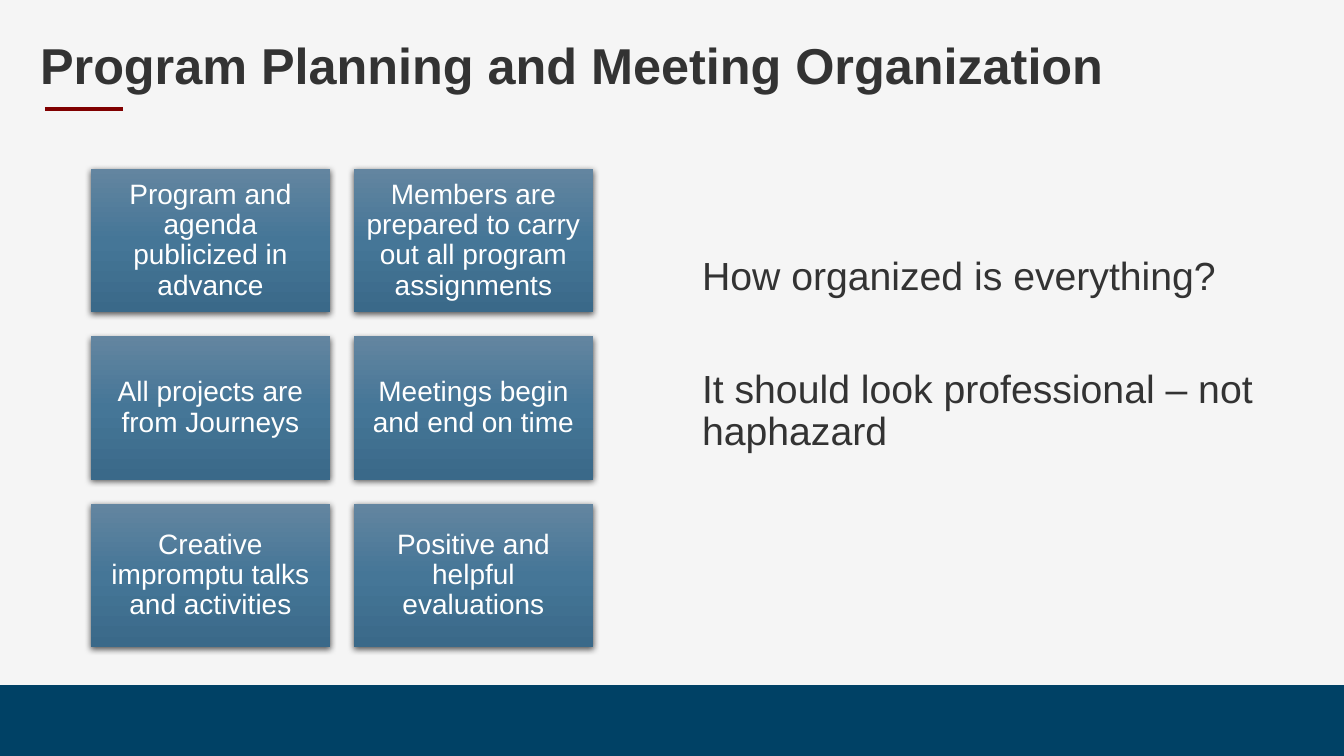
from dataclasses import dataclass
from lxml import etree
from pptx import Presentation
from pptx.dml.color import RGBColor
from pptx.enum.shapes import MSO_CONNECTOR, MSO_SHAPE
from pptx.enum.text import MSO_ANCHOR, MSO_AUTO_SIZE, PP_ALIGN
from pptx.oxml import parse_xml
from pptx.oxml.ns import nsdecls, qn
from pptx.util import Pt

RECT = MSO_SHAPE.RECTANGLE
STRAIGHT = MSO_CONNECTOR.STRAIGHT
MIDDLE, TOP = MSO_ANCHOR.MIDDLE, MSO_ANCHOR.TOP
LEFT, CENTER = PP_ALIGN.LEFT, PP_ALIGN.CENTER
NO_FIT = MSO_AUTO_SIZE.NONE


@dataclass(frozen=True)
class Theme:
    font: str = "Arial"
    background: str = "F5F5F5"
    ink: str = "333333"
    white: str = "FFFFFF"
    band: str = "004165"
    accent: str = "800000"
    shadow: str = "000000"
    card_stops: tuple = ((0, "6385A0"), (50, "457697"), (100, "3A6989"))
    title_size: int = 36
    body_size: int = 28
    card_size: int = 20


THEME = Theme()
CARDS = [
    "Program and agenda publicized in advance",
    "Members are prepared to carry out all program assignments",
    "All projects are from Journeys",
    "Meetings begin and end on time",
    "Creative impromptu talks and activities",
    "Positive and helpful evaluations",
]
QUESTIONS = [
    "How organized is everything?",
    "It should look professional – not haphazard",
]


def px(n):
    return round(n * 914400 / 100.8)


def rgb(value):
    return RGBColor.from_string(value)


def place(sp, box):
    sp.left, sp.top, sp.width, sp.height = map(px, box)


def write(p, text, size, color, align=LEFT, bold=False):
    p.alignment = align
    p.line_spacing = 0.9
    r = p.add_run()
    r.text = text
    r.font.name = THEME.font
    r.font.size = Pt(size)
    r.font.bold = bold
    r.font.color.rgb = rgb(color)


def add_rect(s, box):
    sp = s.shapes.add_shape(RECT, *map(px, box))
    sp.shadow.inherit = False
    sp.line.fill.background()
    return sp


def style_card(sp):
    stops = "".join(
        f'<a:gs pos="{pos * 1000}"><a:srgbClr val="{color}"/></a:gs>'
        for pos, color in THEME.card_stops
    )
    gradient = parse_xml(
        f'<a:gradFill {nsdecls("a")} rotWithShape="1"><a:gsLst>{stops}</a:gsLst>'
        '<a:lin ang="5400000" scaled="0"/></a:gradFill>'
    )
    sp_pr = sp._element.spPr
    sp_pr.find(qn("a:prstGeom")).addnext(gradient)
    sp_pr.find(qn("a:effectLst")).append(parse_xml(
        f'<a:outerShdw {nsdecls("a")} blurRad="{Pt(4.5)}" dist="{Pt(1.5)}" '
        f'dir="5400000" algn="ctr" rotWithShape="0"><a:srgbClr val="{THEME.shadow}">'
        '<a:alpha val="63000"/></a:srgbClr></a:outerShdw>'
    ))


def add_header(s, box):
    left, top, width, height = box
    sp = s.shapes.title
    place(sp, box)
    tf = sp.text_frame
    tf.auto_size = NO_FIT
    tf.vertical_anchor = MIDDLE
    write(tf.paragraphs[0], "Program Planning and Meeting Organization",
          THEME.title_size, THEME.ink, bold=True)
    y = top + height + 5
    rule = s.shapes.add_connector(
        STRAIGHT, *map(px, (left + 15, y, left + 93, y)))
    rule.line.color.rgb = rgb(THEME.accent)
    rule.line.width = Pt(2.25)
    etree.SubElement(rule._element.spPr, qn("a:effectLst"))


def add_questions(s, box):
    sp = s.placeholders[1]
    place(sp, box)
    tf = sp.text_frame
    tf.auto_size = NO_FIT
    tf.vertical_anchor = TOP
    for i, text in enumerate(QUESTIONS):
        p = tf.add_paragraph() if i else tf.paragraphs[0]
        p_pr = p._p.get_or_add_pPr()
        p_pr.set("marL", "0")
        p_pr.set("indent", "0")
        etree.SubElement(p_pr, qn("a:buNone"))
        p.space_before = Pt(50 if i else 0)
        write(p, text, THEME.body_size, THEME.ink)


def add_cards(s, box, columns=2, gap=24):
    left, top, width, height = box
    rows = len(CARDS) // columns
    w = (width - gap * (columns - 1)) / columns
    h = (height - gap * (rows - 1)) / rows
    for i, text in enumerate(CARDS):
        row, column = divmod(i, columns)
        sp = add_rect(s, (left + column * (w + gap), top + row * (h + gap), w, h))
        style_card(sp)
        tf = sp.text_frame
        tf.word_wrap = True
        tf.vertical_anchor = MIDDLE
        tf.margin_left = tf.margin_right = tf.margin_top = tf.margin_bottom = px(8)
        write(tf.paragraphs[0], text, THEME.card_size, THEME.white, CENTER)


def add_footer(s, box):
    sp = add_rect(s, box)
    sp.fill.solid()
    sp.fill.fore_color.rgb = rgb(THEME.band)


def main():
    prs = Presentation()
    prs.slide_width, prs.slide_height = px(1344), px(756)
    s = prs.slides.add_slide(prs.slide_layouts[1])
    s.background.fill.solid()
    s.background.fill.fore_color.rgb = rgb(THEME.background)
    add_footer(s, (0, 685, 1344, 71))
    add_header(s, (30, 32, 1284, 72))
    add_questions(s, (692, 252, 622, 395))
    add_cards(s, (91, 169, 502, 478))
    prs.save("out.pptx")


if __name__ == "__main__":
    main()
